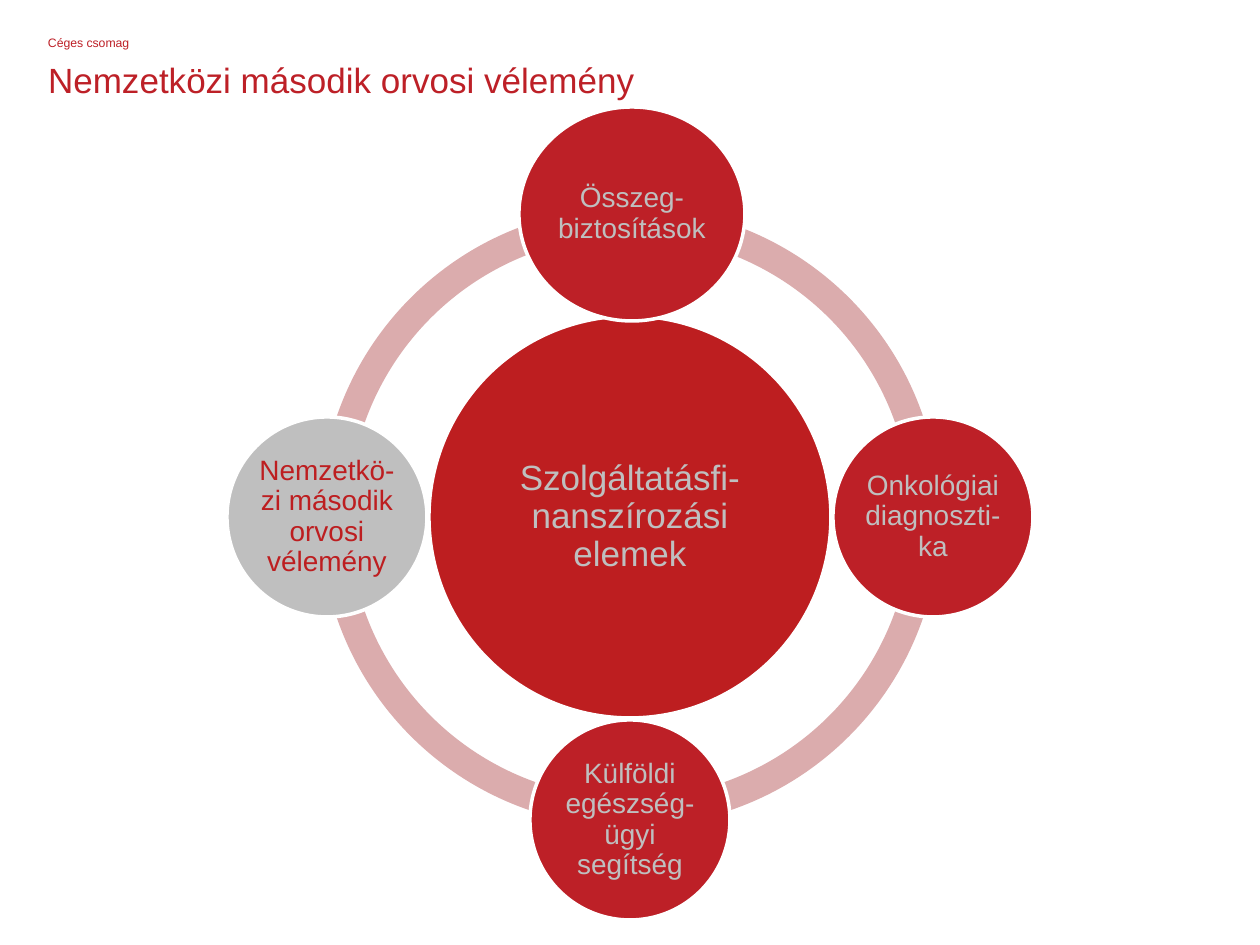
from pptx import Presentation
from pptx.dml.color import RGBColor
from pptx.enum.shapes import MSO_SHAPE
from pptx.enum.text import MSO_ANCHOR, PP_ALIGN
from pptx.util import Emu, Pt

PX = 914400 // 126
RED, DEEP_RED, PINK, GREY, WHITE = "BD2027", "BD1E20", "DBACAD", "BFBFBF", "FFFFFF"

# text, left, top, width, height, size, line height in points
HEADINGS = [
    ("Nemzetközi második orvosi vélemény", 48, 62, 1155, 77, 20, 22),
    ("Céges csomag", 48, 38, 306, 16, 7, 7),
]

CENTRE_X, CENTRE_Y = 630, 517
RING_SIZE = 620
RING_THICKNESS = 0.046
ORBIT = 303
QUARTER_TURN = 54  # 90 degrees in adjustment units

# text, horizontal and vertical offset, width, height, size, inset, fill, text colour
CIRCLES = [
    ("Szolgáltatásfi-nanszírozási elemek", 0, 0, 402, 402, 20, 4, DEEP_RED, GREY),
    ("Összeg-biztosítások", 2, -ORBIT, 226, 214, 16, 3, RED, GREY),
    ("Onkológiai diagnoszti-ka", ORBIT, 0, 200, 200, 16, 3, RED, GREY),
    ("Külföldi egészség-ügyi segítség", 0, ORBIT, 200, 200, 16, 3, RED, GREY),
    ("Nemzetkö-zi második orvosi vélemény", -ORBIT, 0, 200, 200, 16, 3, GREY, DEEP_RED),
]


def px(*lengths):
    return [Emu(length * PX) for length in lengths]


def colour(value):
    return RGBColor.from_string(value)


def write(frame, text, size, text_colour, inset, spacing):
    frame.word_wrap = True
    frame.margin_left = frame.margin_right = Emu(inset * PX)
    frame.margin_top = frame.margin_bottom = Emu(inset * PX)
    para = frame.paragraphs[0]
    para.line_spacing = spacing
    span = para.add_run()
    span.text = text
    span.font.name = "Arial"
    span.font.size = Pt(size)
    span.font.color.rgb = colour(text_colour)
    return para


def add_filled(page, kind, centre_x, centre_y, width, height, fill):
    shape = page.shapes.add_shape(
        kind, *px(centre_x - width // 2, centre_y - height // 2, width, height))
    shape.shadow.inherit = False
    shape.fill.solid()
    shape.fill.fore_color.rgb = colour(fill)
    return shape


def add_ring(page):
    for quarter in range(4):
        arc = add_filled(page, MSO_SHAPE.BLOCK_ARC, CENTRE_X, CENTRE_Y,
                         RING_SIZE, RING_SIZE, PINK)
        arc.line.fill.background()
        arc.adjustments[0] = quarter * QUARTER_TURN
        arc.adjustments[1] = (quarter + 1) % 4 * QUARTER_TURN
        arc.adjustments[2] = RING_THICKNESS


def add_circle(page, text, dx, dy, width, height, size, inset, fill, text_colour):
    circle = add_filled(page, MSO_SHAPE.OVAL, CENTRE_X + dx, CENTRE_Y + dy,
                        width, height, fill)
    circle.line.color.rgb = colour(WHITE)
    circle.line.width = Pt(2)
    frame = circle.text_frame
    frame.vertical_anchor = MSO_ANCHOR.MIDDLE
    write(frame, text, size, text_colour, inset, 0.9).alignment = PP_ALIGN.CENTER


def main():
    deck = Presentation()
    deck.slide_width, deck.slide_height = px(1260, 945)
    page = deck.slides.add_slide(deck.slide_layouts[6])
    for text, left, top, width, height, size, line_height in HEADINGS:
        box = page.shapes.add_textbox(*px(left, top, width, height))
        write(box.text_frame, text, size, RED, 0, Pt(line_height))
    add_ring(page)
    for circle in CIRCLES:
        add_circle(page, *circle)
    deck.save("out.pptx")


if __name__ == "__main__":
    main()
